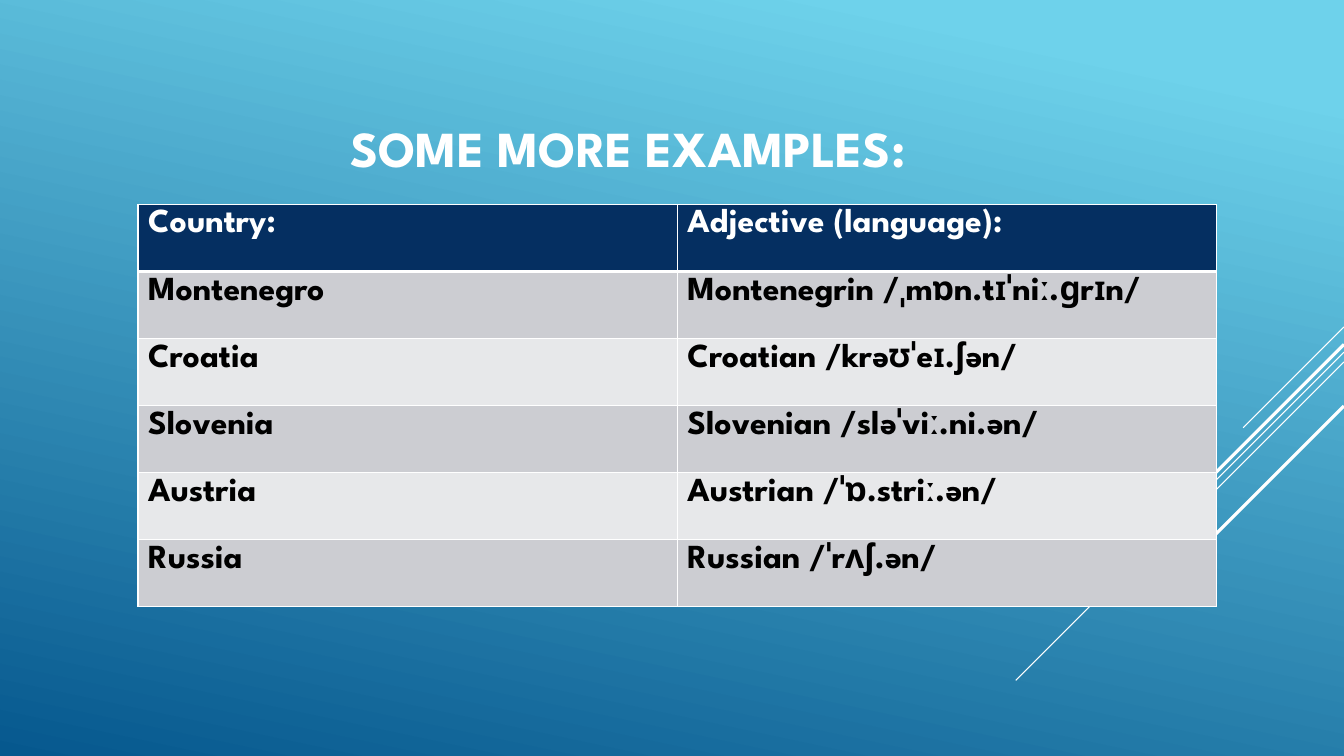
"""Builds a slide with a table of countries and their adjectives."""
import pptx
import pptx.dml.color
import pptx.enum.shapes
import pptx.enum.text
import pptx.oxml
import pptx.oxml.ns
import pptx.util

Pt = pptx.util.Pt

ROWS = [
    ("Country:", "Adjective (language):"),
    ("Montenegro", "Montenegrin /ˌmɒn.tɪˈniː.ɡrɪn/"),
    ("Croatia", "Croatian /krəʊˈeɪ.ʃən/"),
    ("Slovenia", "Slovenian /sləˈviː.ni.ən/"),
    ("Austria", "Austrian /ˈɒ.striː.ən/"),
    ("Russia", "Russian /ˈrʌʃ.ən/"),
]
DIAGONALS = [
    (233.5, 72, 0.75),
    (251.5, 234.5, 0.75),
    (258.5, 149, 0.75),
    (246, 137.5, 2.25),
    (290, 100, 2.25),
]


def color(value):
    return pptx.dml.color.RGBColor.from_string(value)


def write(text_frame, text, size=24, fill="000000", font="League Spartan", align=None):
    paragraph = text_frame.paragraphs[0]
    paragraph.alignment = align
    run = paragraph.add_run()
    run.text = text
    run.font.name = font
    run.font.size = Pt(size)
    run.font.bold = True
    run.font.color.rgb = color(fill)


class ExamplesSlide:
    white = "FFFFFF"
    header = "052F61"
    bands = ("E7E8EA", "CCCDD2")
    gradient = ((0.1, "6ED2EB"), (1, "06588E"))

    def __init__(self, presentation):
        self.width = presentation.slide_width.pt
        self.slide = presentation.slides.add_slide(presentation.slide_layouts[5])

    def background(self):
        fill = self.slide.background.fill
        fill.gradient()
        fill.gradient_angle = 258
        for stop, (position, value) in zip(fill.gradient_stops, self.gradient):
            stop.position = position
            stop.color.rgb = color(value)

    def diagonal(self, top, length, weight):
        connector = self.slide.shapes.add_connector(
            pptx.enum.shapes.MSO_CONNECTOR.STRAIGHT,
            Pt(self.width), Pt(top), Pt(self.width - length), Pt(top + length))
        connector.line.color.rgb = color(self.white)
        connector.line.width = Pt(weight)
        properties = connector._element.spPr
        properties.append(pptx.oxml.parse_xml(
            f'<a:effectLst {pptx.oxml.ns.nsdecls("a")}/>'))

    def title(self, text, left, top, width, height):
        title = self.slide.shapes.title
        title.left, title.top = Pt(left), Pt(top)
        title.width, title.height = Pt(width), Pt(height)
        frame = title.text_frame
        frame.margin_left = Pt(54)
        frame.word_wrap = True
        frame.vertical_anchor = pptx.enum.text.MSO_ANCHOR.MIDDLE
        write(frame, text, size=36, fill=self.white,
              align=pptx.enum.text.PP_ALIGN.CENTER)

    def border(self, cell, side, weight):
        cell._tc.get_or_add_tcPr().append(pptx.oxml.parse_xml(
            f'<a:ln{side} {pptx.oxml.ns.nsdecls("a")} w="{Pt(weight)}"><a:solidFill>'
            f'<a:srgbClr val="{self.white}"/></a:solidFill></a:ln{side}>'))

    def table(self, rows, left, top, column_width, row_height):
        columns = len(rows[0])
        table = self.slide.shapes.add_table(
            len(rows), columns, Pt(left), Pt(top),
            Pt(column_width * columns), Pt(row_height * len(rows))).table
        for row_index, row in enumerate(rows):
            is_header = row_index == 0
            weights = {"L": 1, "R": 1, "T": 3 if row_index == 1 else 1,
                       "B": 3 if is_header else 1}
            for column_index, text in enumerate(row):
                cell = table.cell(row_index, column_index)
                for side, weight in weights.items():
                    self.border(cell, side, weight)
                cell.fill.solid()
                cell.fill.fore_color.rgb = color(
                    self.header if is_header else self.bands[row_index % 2])
                write(cell.text_frame, text,
                      fill=self.white if is_header else "000000")


def main():
    presentation = pptx.Presentation()
    presentation.slide_width, presentation.slide_height = Pt(960), Pt(540)
    examples = ExamplesSlide(presentation)
    examples.background()
    for diagonal in DIAGONALS:
        examples.diagonal(*diagonal)
    examples.title("SOME MORE EXAMPLES:", 89.3, 79.2, 671.8, 52.6)
    examples.table(ROWS, 98.6, 146, 385.2, 47.9)
    presentation.save("out.pptx")


if __name__ == "__main__":
    main()
